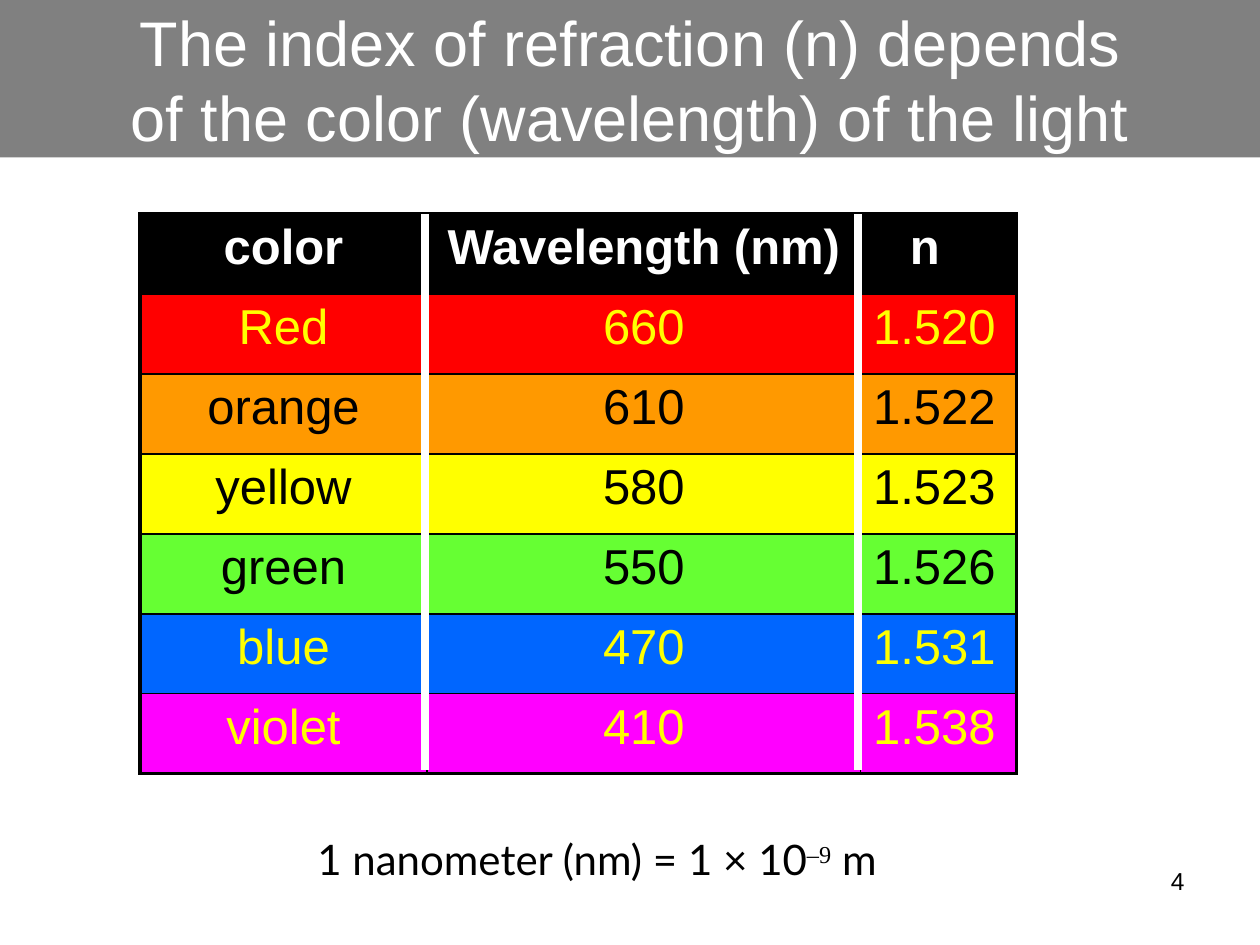
from lxml import etree
from pptx import Presentation
from pptx import util as u
from pptx.dml.color import RGBColor
from pptx.enum import shapes, text
from pptx.oxml import ns

BLACK = RGBColor(0x00, 0x00, 0x00)
WHITE = RGBColor(0xFF, 0xFF, 0xFF)
GRAY = RGBColor(0x80, 0x80, 0x80)
RED = RGBColor(0xFF, 0x00, 0x00)
ORANGE = RGBColor(0xFF, 0x99, 0x00)
YELLOW = RGBColor(0xFF, 0xFF, 0x00)
GREEN = RGBColor(0x66, 0xFF, 0x33)
BLUE = RGBColor(0x00, 0x66, 0xFF)
VIOLET = RGBColor(0xFF, 0x00, 0xFF)

WIDTH, HEIGHT = u.Inches(10), u.Inches(7.5)
COLUMNS = (2.28, 3.44, 1.24)
SPECTRUM = (
    (("color", "Wavelength (nm)", "n"), BLACK, WHITE),
    (("Red", "660", "1.520"), RED, YELLOW),
    (("orange", "610", "1.522"), ORANGE, BLACK),
    (("yellow", "580", "1.523"), YELLOW, BLACK),
    (("green", "550", "1.526"), GREEN, BLACK),
    (("blue", "470", "1.531"), BLUE, YELLOW),
    (("violet", "410", "1.538"), VIOLET, YELLOW),
)


def share(left, top, width, height):
    """Turn shares of the slide into a box of lengths."""
    return int(left * WIDTH), int(top * HEIGHT), int(width * WIDTH), int(height * HEIGHT)


def style(run, size, color, font="Arial", bold=False):
    """Format one run."""
    run.font.size = u.Pt(size)
    run.font.name = font
    run.font.bold = bold
    run.font.color.rgb = color


def add_heading(slide, box):
    """Place the title in its gray band."""
    heading = slide.shapes.title
    heading.left, heading.top, heading.width, heading.height = box
    heading.fill.solid()
    heading.fill.fore_color.rgb = GRAY
    frame = heading.text_frame
    frame.text = "The index of refraction (n) depends\vof the color (wavelength) of the light"
    frame.auto_size = text.MSO_AUTO_SIZE.NONE
    frame.vertical_anchor = text.MSO_ANCHOR.MIDDLE
    frame.paragraphs[0].alignment = text.PP_ALIGN.CENTER
    for run in frame.paragraphs[0].runs:
        style(run, 36, WHITE)


def set_border(cell, side, points):
    """Draw one black border of a cell."""
    border = etree.SubElement(cell._tc.get_or_add_tcPr(), ns.qn(f"a:ln{side}"), w=str(u.Pt(points)))
    fill = etree.SubElement(border, ns.qn("a:solidFill"))
    etree.SubElement(fill, ns.qn("a:srgbClr"), val=str(BLACK))


def add_spectrum(slide, box):
    """Place the table of colors and the white bars between its columns."""
    left, top, width, height = box
    last_row, last_column = len(SPECTRUM) - 1, len(COLUMNS) - 1
    table = slide.shapes.add_table(len(SPECTRUM), len(COLUMNS), *box).table
    for column, part in zip(table.columns, COLUMNS):
        column.width = int(width * part / sum(COLUMNS))
    for r, (labels, background, ink) in enumerate(SPECTRUM):
        table.rows[r].height = height // len(SPECTRUM)
        for c, label in enumerate(labels):
            cell = table.cell(r, c)
            outer = {"L": c == 0, "R": c == last_column, "T": r == 0, "B": r == last_row}
            for side, is_outer in outer.items():
                set_border(cell, side, 2.25 if is_outer else 1)
            cell.fill.solid()
            cell.fill.fore_color.rgb = background
            cell.text_frame.text = label
            paragraph = cell.text_frame.paragraphs[0]
            paragraph.space_before = u.Pt(5.6)
            centered = r == 0 or c < last_column
            paragraph.alignment = text.PP_ALIGN.CENTER if centered else text.PP_ALIGN.LEFT
            style(paragraph.runs[0], 28, ink, bold=r == 0)
    table.cell(0, last_column).margin_right = u.Inches(0.32)

    for c in range(1, len(COLUMNS)):
        x = left + int(width * sum(COLUMNS[:c]) / sum(COLUMNS)) - u.Inches(0.02)
        bar = slide.shapes.add_connector(
            shapes.MSO_CONNECTOR.STRAIGHT, x, top, x, top + height - u.Inches(0.03))
        bar.line.color.rgb = WHITE
        bar.line.width = u.Pt(4.5)
        etree.SubElement(bar._element.spPr, ns.qn("a:effectLst"))


def add_unit_note(slide, box):
    """Place the definition of the nanometer."""
    frame = slide.shapes.add_textbox(*box).text_frame
    frame.word_wrap = False
    frame.auto_size = text.MSO_AUTO_SIZE.SHAPE_TO_FIT_TEXT
    parts = (("1 nanometer (nm) = 1 × 10", "Lato"), ("–9", "Times New Roman"), (" m", "Lato"))
    for words, font in parts:
        run = frame.paragraphs[0].add_run()
        run.text = words
        style(run, 24, BLACK, font)
    frame.paragraphs[0].runs[1].font._element.set("baseline", "30000")


def add_page_number(slide, box):
    """Place the page number at the right of its box."""
    frame = slide.shapes.add_textbox(*box).text_frame
    frame.word_wrap = True
    frame.text = "4"
    frame.paragraphs[0].alignment = text.PP_ALIGN.RIGHT
    style(frame.paragraphs[0].runs[0], 14, BLACK)


def main():
    """Build the slide and save it."""
    deck = Presentation()
    deck.slide_width, deck.slide_height = WIDTH, HEIGHT
    slide = deck.slides.add_slide(deck.slide_layouts[5])
    add_page_number(slide, share(0.72, 0.91, 0.23, 0.07))
    add_heading(slide, share(0, 0, 1, 1 / 6))
    add_spectrum(slide, (u.Inches(1.11), u.Inches(1.7), u.Inches(sum(COLUMNS)), u.Inches(4.44)))
    add_unit_note(slide, (u.Inches(2.42), u.Inches(6.57), u.Inches(4.9), u.Inches(0.5)))
    deck.save("out.pptx")


if __name__ == "__main__":
    main()
